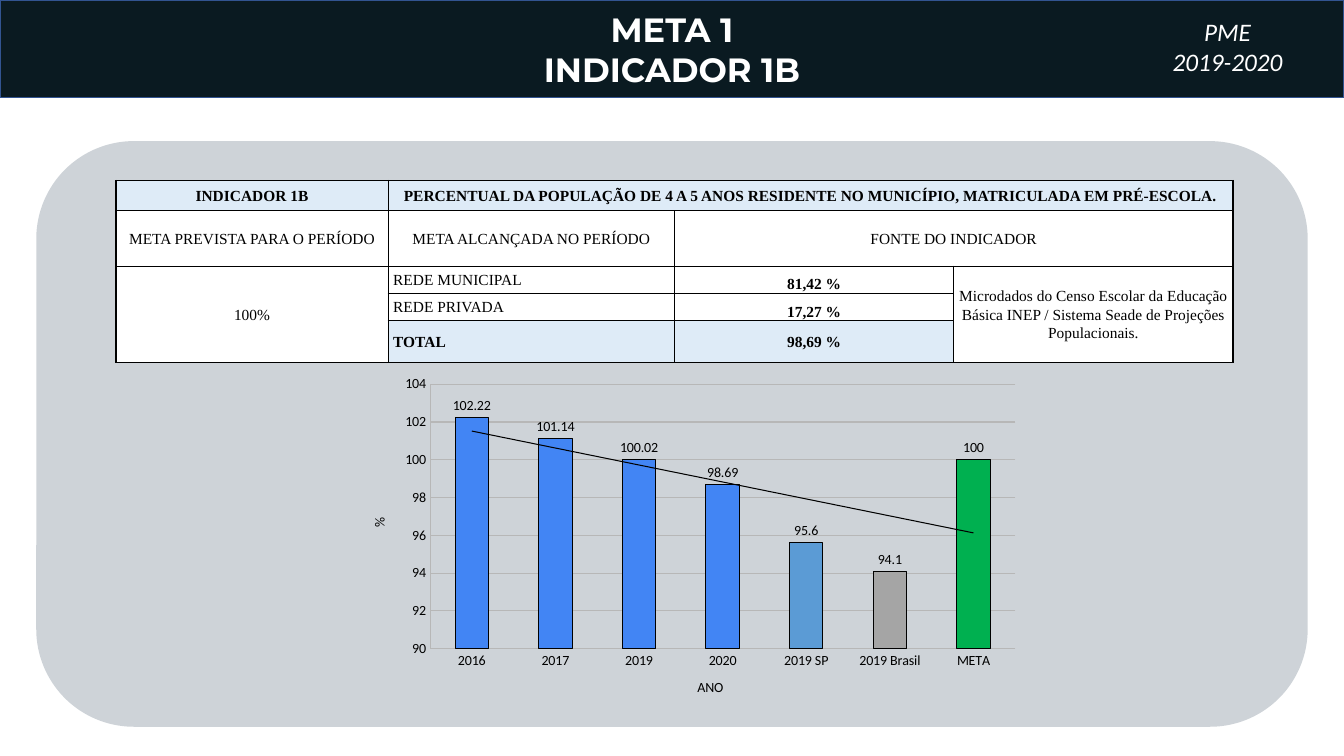
from lxml import etree
from pptx import Presentation
from pptx.chart.data import CategoryChartData
from pptx.dml.color import RGBColor
from pptx.enum.chart import XL_CHART_TYPE, XL_LABEL_POSITION, XL_TICK_MARK
from pptx.enum.shapes import MSO_SHAPE
from pptx.enum.text import MSO_ANCHOR, MSO_AUTO_SIZE, PP_ALIGN
from pptx.oxml import parse_xml
from pptx.oxml.ns import nsdecls, qn
from pptx.util import Inches, Pt

CENTER, LEFT = PP_ALIGN.CENTER, PP_ALIGN.LEFT
MIDDLE, BOTTOM = MSO_ANCHOR.MIDDLE, MSO_ANCHOR.BOTTOM
NO_TICKS = XL_TICK_MARK.NONE
TITLE_ONLY = 5

WIDTH, HEIGHT = 13.33, 7.5
COLORS = {
    "header": "0A1A21", "header_line": "325491", "panel": "CED3D8",
    "tint": "DEEBF7", "white": "FFFFFF", "black": "000000",
    "grid": "B7B7B7", "city": "4285F4", "state": "5B9BD5",
    "country": "A5A5A5", "target": "00B050",
}

COLUMNS = [2.7, 2.84, 2.77, 2.77]
ROWS = [0.3, 0.55, 0.27, 0.27, 0.42]
# (row, column, row span, column span, text, bold, tinted, alignment, anchor)
CELLS = [
    (0, 0, 1, 1, "INDICADOR 1B", True, True, CENTER, MIDDLE),
    (0, 1, 1, 3, "PERCENTUAL DA POPULAÇÃO DE 4 A 5 ANOS RESIDENTE NO MUNICÍPIO, "
     "MATRICULADA EM PRÉ-ESCOLA.", True, True, CENTER, MIDDLE),
    (1, 0, 1, 1, "META PREVISTA PARA O PERÍODO", False, False, CENTER, MIDDLE),
    (1, 1, 1, 1, "META ALCANÇADA NO PERÍODO", False, False, CENTER, MIDDLE),
    (1, 2, 1, 2, "FONTE DO INDICADOR", False, False, CENTER, MIDDLE),
    (2, 0, 3, 1, "100%", False, False, CENTER, MIDDLE),
    (2, 1, 1, 1, "REDE MUNICIPAL", False, False, LEFT, MIDDLE),
    (2, 2, 1, 1, "81,42 %", True, False, CENTER, BOTTOM),
    (2, 3, 3, 1, "Microdados do Censo Escolar da Educação Básica INEP / "
     "Sistema Seade de Projeções Populacionais.", False, False, CENTER, MIDDLE),
    (3, 1, 1, 1, "REDE PRIVADA", False, False, LEFT, MIDDLE),
    (3, 2, 1, 1, "17,27 %", True, False, CENTER, BOTTOM),
    (4, 1, 1, 1, "TOTAL", True, True, LEFT, MIDDLE),
    (4, 2, 1, 1, "98,69 %", True, True, CENTER, MIDDLE),
]
# (category, percentage, colour)
BARS = [
    ("2016", 102.22, "city"), ("2017", 101.14, "city"),
    ("2019", 100.02, "city"), ("2020", 98.69, "city"),
    ("2019 SP", 95.6, "state"), ("2019 Brasil", 94.1, "country"),
    ("META", 100, "target"),
]


def rgb(name):
    return RGBColor.from_string(COLORS[name])


def paint(item, fill):
    item.fill.solid()
    item.fill.fore_color.rgb = rgb(fill)


def outline(line, color, width):
    line.color.rgb = rgb(color)
    line.width = Pt(width)


def style_font(font, name, size, color, bold=False, italic=False):
    font.name, font.size = name, Pt(size)
    font.bold, font.italic = bold, italic
    font.color.rgb = rgb(color)


def write_lines(frame, lines, **font):
    frame.word_wrap = True
    frame.text = "\n".join(lines)
    for para in frame.paragraphs:
        para.alignment = CENTER
        para.line_spacing = 1.0
        style_font(para.font, color="white", **font)


def place(shape, box):
    shape.left, shape.top, shape.width, shape.height = map(Inches, box)


def add_header(page, box):
    left, top, width, height = box
    title = page.shapes.title
    place(title, box)
    paint(title, "header")
    outline(title.line, "header_line", 1)
    write_lines(title.text_frame, ["META 1", "INDICADOR 1B"],
                name="Montserrat", size=24, bold=True)
    title.text_frame.auto_size = MSO_AUTO_SIZE.NONE
    title.text_frame.vertical_anchor = MIDDLE

    # Plan name and period at the right end of the bar
    period = page.shapes.add_textbox(0, 0, 0, 0)
    place(period, (left + 10.87, top + 0.11, 2.61, 0.71))
    write_lines(period.text_frame, ["PME", "2019-2020"],
                name="Calibri", size=18, italic=True)


def add_panel(page, box):
    panel = page.shapes.add_shape(MSO_SHAPE.ROUNDED_RECTANGLE, *map(Inches, box))
    panel.shadow.inherit = False
    paint(panel, "panel")
    panel.line.fill.background()


def add_borders(cell):
    properties = cell._tc.get_or_add_tcPr()
    for index, side in enumerate(("lnL", "lnR", "lnT", "lnB")):
        properties.insert(index, parse_xml(
            f'<a:{side} {nsdecls("a")} w="{Pt(1)}"><a:solidFill>'
            f'<a:srgbClr val="{COLORS["black"]}"/></a:solidFill></a:{side}>'))


def add_indicator_table(page, box):
    table = page.shapes.add_table(len(ROWS), len(COLUMNS), *map(Inches, box)).table
    table.first_row = table.horz_banding = False
    for column, width in zip(table.columns, COLUMNS):
        column.width = Inches(width)
    for row, height in zip(table.rows, ROWS):
        row.height = Inches(height)
    for cell in table.iter_cells():
        paint(cell, "white")
        add_borders(cell)
        cell.margin_left = cell.margin_right = Inches(0.05)
        cell.margin_top = cell.margin_bottom = 0
        style_font(cell.text_frame.paragraphs[0].font, "Times New Roman", 11, "black")

    for row, column, down, across, text, bold, tinted, alignment, anchor in CELLS:
        cell = table.cell(row, column)
        if down * across > 1:
            cell.merge(table.cell(row + down - 1, column + across - 1))
        paint(cell, "tint" if tinted else "white")
        cell.text = text
        cell.vertical_anchor = anchor
        para = cell.text_frame.paragraphs[0]
        para.alignment = alignment
        para.line_spacing, para.space_after = 1.07, Pt(8)
        style_font(para.font, "Times New Roman", 11, "black", bold)


def style_axis(axis, title):
    axis.major_tick_mark = axis.minor_tick_mark = NO_TICKS
    outline(axis.format.line, "grid", 0.75)
    frame = axis.axis_title.text_frame
    frame.text = title
    style_font(frame.paragraphs[0].font, "Calibri", 10, "black")


def set_plot_layout(chart, x, y, w, h):
    area = chart._chartSpace.find(".//" + qn("c:plotArea"))
    for old in area.findall(qn("c:layout")):
        area.remove(old)
    layout = etree.Element(qn("c:layout"))
    manual = etree.SubElement(layout, qn("c:manualLayout"))
    settings = {"layoutTarget": "inner", "xMode": "edge", "yMode": "edge",
                "x": x, "y": y, "w": w, "h": h}
    for tag, value in settings.items():
        etree.SubElement(manual, qn("c:" + tag)).set("val", str(value))
    area.insert(0, layout)


def add_trend_line(series):
    series._element.find(qn("c:cat")).addprevious(parse_xml(
        f'<c:trendline {nsdecls("c", "a")}><c:spPr><a:ln w="{Pt(0.75)}"><a:solidFill>'
        f'<a:srgbClr val="{COLORS["black"]}"/></a:solidFill></a:ln></c:spPr>'
        '<c:trendlineType val="linear"/><c:dispRSqr val="0"/><c:dispEq val="0"/>'
        '</c:trendline>'))


def add_percentage_chart(page, box):
    data = CategoryChartData()
    data.categories = [category for category, _, _ in BARS]
    data.add_series("Series 1", [value for _, value, _ in BARS])
    chart = page.shapes.add_chart(
        XL_CHART_TYPE.COLUMN_CLUSTERED, *map(Inches, box), data).chart
    chart.has_legend = chart.has_title = False
    style_font(chart.font, "Calibri", 10, "black")
    set_plot_layout(chart, 0.11, 0.045, 0.881, 0.774)

    # Axes
    style_axis(chart.category_axis, "ANO")
    values = chart.value_axis
    style_axis(values, "%")
    values.minimum_scale, values.maximum_scale, values.major_unit = 90, 104, 2
    outline(values.major_gridlines.format.line, "grid", 0.75)

    # Columns, labels and trend
    plot = chart.plots[0]
    plot.vary_by_categories = False
    plot.gap_width = 150
    series = plot.series[0]
    series.invert_if_negative = False
    paint(series.format, "city")
    outline(series.format.line, "black", 0.75)
    for index, (_, _, color) in enumerate(BARS):
        if color != "city":
            point = series.points[index].format
            paint(point, color)
            outline(point.line, "black", 0.75)
    labels = series.data_labels
    labels.show_value = True
    labels.position = XL_LABEL_POSITION.OUTSIDE_END
    style_font(labels.font, "Calibri", 10, "black")
    add_trend_line(series)


def main():
    deck = Presentation()
    deck.slide_width, deck.slide_height = Inches(WIDTH), Inches(HEIGHT)
    page = deck.slides.add_slide(deck.slide_layouts[TITLE_ONLY])
    add_panel(page, (0.36, 1.4, 12.61, 5.81))
    add_header(page, (0, 0, WIDTH, 0.97))
    add_indicator_table(page, (1.15, 1.79, sum(COLUMNS), sum(ROWS)))
    add_percentage_chart(page, (3.54, 3.66, 6.59, 3.39))
    deck.save("out.pptx")


if __name__ == "__main__":
    main()
